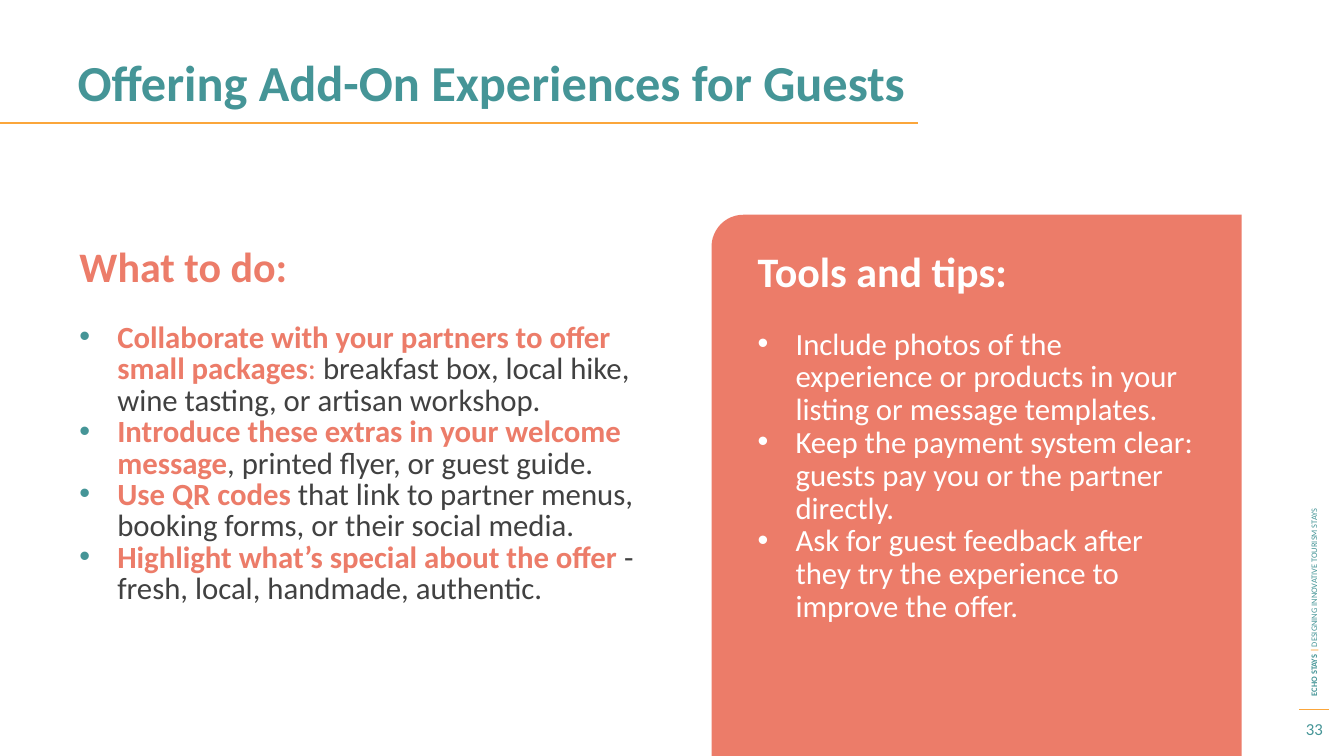
from lxml.etree import SubElement
from pptx import Presentation
from pptx.dml.color import RGBColor
from pptx.enum.shapes import MSO_CONNECTOR, MSO_SHAPE
from pptx.enum.text import MSO_ANCHOR, MSO_AUTO_SIZE, PP_ALIGN
from pptx.oxml.ns import qn
from pptx.util import Pt

COLORS = {"teal": "459597", "orange": "FBA63B", "coral": "EC7C69",
          "grey": "414141", "white": "FFFFFF"}
FONT = "Calibri"

# Content: each run is (text, color, bold)
TITLE = [("Offering Add-On Experiences for Guests", "teal", True)]
TODO_HEADING = [("What to do:", "coral", True)]
TODO_ITEMS = [
    [("Collaborate with your partners to offer small packages", "coral", True),
     (": ", "coral", False),
     ("breakfast box, local hike, wine tasting, or artisan workshop.", "grey", False)],
    [("Introduce these extras in your welcome message", "coral", True),
     (", printed flyer, or guest guide.", "grey", False)],
    [("Use QR codes ", "coral", True),
     ("that link to partner menus, booking forms, or their social media.", "grey", False)],
    [("Highlight what’s special about the offer ", "coral", True),
     ("- fresh, local, handmade, authentic.", "grey", False)],
]
TIPS_HEADING = [("Tools and tips:", "white", True)]
TIPS_ITEMS = [
    [(text, "white", False)] for text in (
        "Include photos of the experience or products in your listing or message templates.",
        "Keep the payment system clear: guests pay you or the partner directly.",
        "Ask for guest feedback after they try the experience to improve the offer.",
    )
]
FOOTER = [("ECHO STAYS ", "teal", True), ("| ", "orange", True),
          ("DESIGNING INNOVATIVE TOURISM STAYS", "teal", False)]
PAGE_NUMBER = [("33", "teal", False)]

# Layout in points
INDENT = 27
TODO_LEFT, TODO_WIDTH = 49.7, 442
TODO_LEADING, TIPS_LEADING = 22.4, 23.4
CARD_LEFT, CARD_TOP, CARD_WIDTH, CARD_HEIGHT = 508.3, 153.4, 378.7, 386.6


def color(name):
    return RGBColor.from_string(COLORS[name])


def prepare(frame, anchor=MSO_ANCHOR.TOP):
    frame.word_wrap = True
    frame.auto_size = MSO_AUTO_SIZE.NONE
    frame.vertical_anchor = anchor
    return frame


def add_box(page, left, top, width, height, anchor=MSO_ANCHOR.TOP):
    box = page.shapes.add_textbox(Pt(left), Pt(top), Pt(width), Pt(height))
    prepare(box.text_frame, anchor)
    return box


def write(para, runs, size, leading=None, align=PP_ALIGN.LEFT):
    para.alignment = align
    if leading:
        para.line_spacing = Pt(leading)
    for text, color_name, bold in runs:
        span = para.add_run()
        span.text = text
        span.font.name, span.font.size, span.font.bold = FONT, Pt(size), bold
        span.font.color.rgb = color(color_name)


def add_bullet(para, color_name):
    props = para._p.get_or_add_pPr()
    props.set("marL", str(Pt(INDENT)))
    props.set("indent", str(-Pt(INDENT)))
    SubElement(SubElement(props, qn("a:buClr")), qn("a:srgbClr"), val=COLORS[color_name])
    SubElement(props, qn("a:buFont"), typeface="Arial")
    SubElement(props, qn("a:buChar"), char="•")


def write_list(frame, items, leading, bullet_color):
    for item in items:
        para = frame.paragraphs[-1]
        if para.runs:
            para = frame.add_paragraph()
        add_bullet(para, bullet_color)
        write(para, item, 22, leading)


def add_rule(page, left, right, y, weight):
    rule = page.shapes.add_connector(MSO_CONNECTOR.STRAIGHT, Pt(left), Pt(y), Pt(right), Pt(y))
    rule.line.color.rgb = color("orange")
    rule.line.width = Pt(weight)
    SubElement(rule._element.spPr, qn("a:effectLst"))


def main():
    deck = Presentation()
    deck.slide_width, deck.slide_height = Pt(960), Pt(540)
    page = deck.slides.add_slide(deck.slide_layouts[5])

    # Title and its underline
    title = page.shapes.title
    title.left, title.top, title.width, title.height = Pt(48.2), Pt(38.9), Pt(864), Pt(63.4)
    write(prepare(title.text_frame).paragraphs[0], TITLE, 36, 37.2)
    add_rule(page, 0, 656, 87.8, 1.5)

    # Side footer and page number
    add_rule(page, 928, 949, 507, 0.75)
    footer = add_box(page, 730.8, 289.4, 415.4, 14.4, MSO_ANCHOR.MIDDLE)
    footer.rotation = 270
    write(footer.text_frame.paragraphs[0], FOOTER, 6)
    number = add_box(page, 920.2, 508.3, 37.4, 24.5, MSO_ANCHOR.MIDDLE)
    write(number.text_frame.paragraphs[0], PAGE_NUMBER, 12, align=PP_ALIGN.CENTER)

    # What to do
    heading = add_box(page, TODO_LEFT, 175, TODO_WIDTH, 63.4)
    write(heading.text_frame.paragraphs[0], TODO_HEADING, 30, 29)
    todo = add_box(page, TODO_LEFT, 227.5, TODO_WIDTH, 288)
    write_list(todo.text_frame, TODO_ITEMS, TODO_LEADING, "teal")

    # Card with its top left corner rounded
    card = page.shapes.add_shape(MSO_SHAPE.ROUND_1_RECTANGLE, Pt(CARD_LEFT),
                                 Pt(CARD_TOP), Pt(CARD_WIDTH), Pt(CARD_HEIGHT))
    card.adjustments[0] = 0.06
    card._element.spPr.find(qn("a:xfrm")).set("flipH", "1")
    card.shadow.inherit = False
    card.fill.solid()
    card.fill.fore_color.rgb = color("coral")
    card.line.fill.background()

    # Tools and tips
    tips = add_box(page, 534.2, 184.3, 326.9, 258.5).text_frame
    write(tips.paragraphs[0], TIPS_HEADING, 30, TIPS_LEADING)
    write_list(tips, TIPS_ITEMS, TIPS_LEADING, "white")
    tips.paragraphs[1].space_before = Pt(TIPS_LEADING)

    deck.save("out.pptx")


if __name__ == "__main__":
    main()
